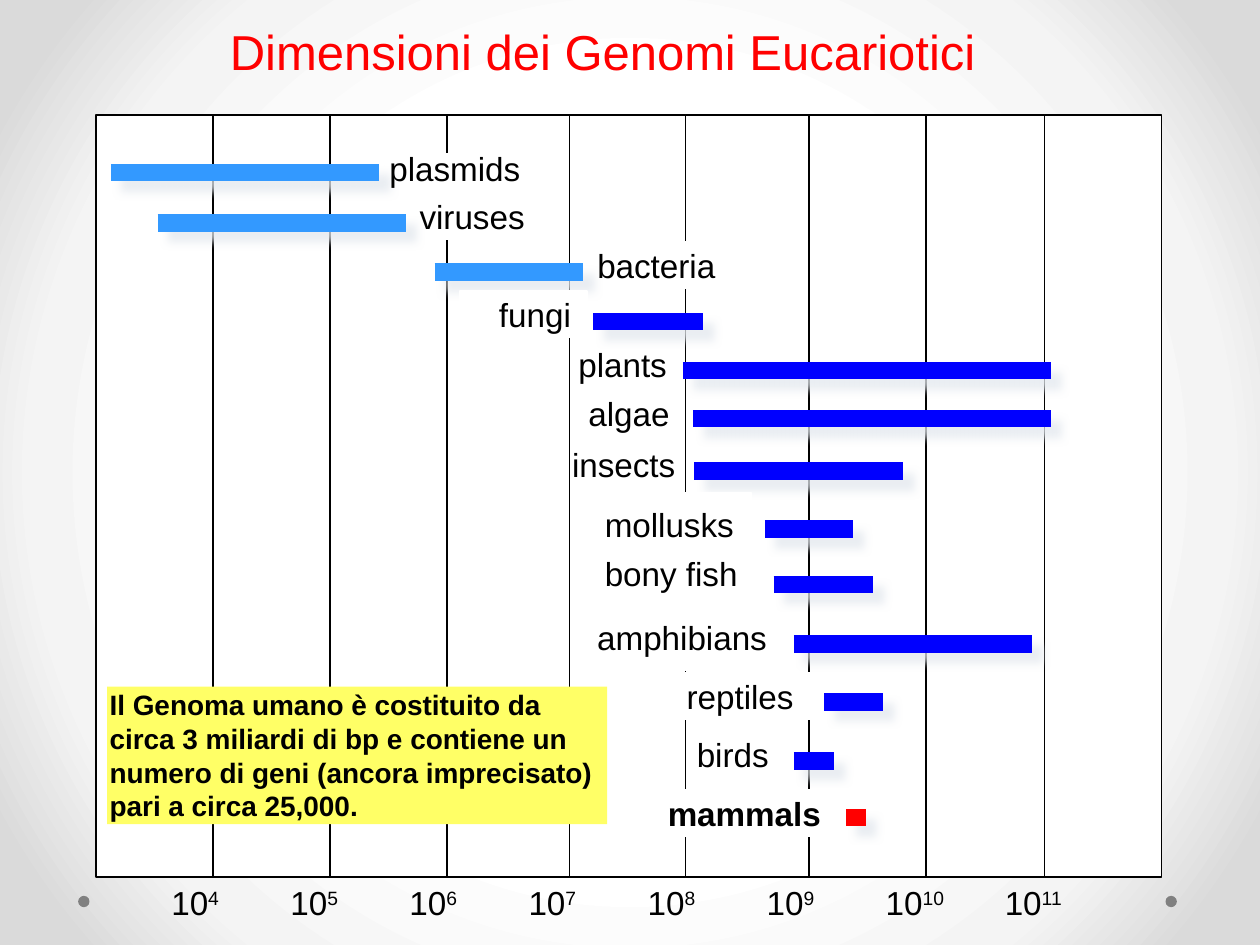
import pptx
import pptx.util
import pptx.dml.color
import pptx.enum.shapes
import pptx.enum.text
import pptx.oxml
import pptx.oxml.ns

# The slide is a grid of square cells, 100 columns by 75 rows
CELL = pptx.util.Inches(0.1)
COLUMNS, ROWS = 100, 75
NS = pptx.oxml.ns.nsdecls("a")
SHAPES = pptx.enum.shapes.MSO_SHAPE
TEXT = pptx.enum.text

FRAME_FORMAT = {
    "margin_left": pptx.util.Inches(0.02),
    "margin_right": pptx.util.Inches(0.02),
    "margin_top": pptx.util.Inches(0.01),
    "margin_bottom": pptx.util.Inches(0.01),
    "vertical_anchor": TEXT.MSO_ANCHOR.TOP,
    "auto_size": TEXT.MSO_AUTO_SIZE.NONE,
}

SKY, BLUE, RED = "3399FF", "0000FF", "FF0000"
BLACK, WHITE, YELLOW, GREY = "000000", "FFFFFF", "FFFF66", "808080"

DECADE_EDGES = [7.6, 16.9, 26.2, 35.5, 45.2, 54.4, 64.2, 73.5, 82.9, 92.2]
CHART_TOP, CHART_HEIGHT = 9.1, 60.5

# name, colour, bar (from, to, row), label (column, row, width)
GROUPS = [
    ("plasmids", SKY, (8.8, 30.1, 13.7), (30.7, 11.7, 10.9)),
    ("viruses", SKY, (12.5, 32.2, 17.7), (33.1, 15.5, 8.8)),
    ("bacteria", SKY, (34.5, 46.3, 21.6), (47.2, 19.4, 9.9)),
    ("fungi", BLUE, (47.1, 55.8, 25.5), (39.4, 23.3, 6.2)),
    ("plants", BLUE, (54.2, 83.4, 29.4), (45.7, 27.2, 7.5)),
    ("algae", BLUE, (55, 83.4, 33.2), (46.5, 31.1, 6.9)),
    ("insects", BLUE, (55.1, 71.7, 37.4), (45.2, 35.2, 8.7)),
    ("mollusks", BLUE, (60.7, 67.7, 42), (47.8, 39.9, 10.7)),
    ("bony fish", BLUE, (61.4, 69.3, 46.4), (47.8, 43.8, 11)),
    ("amphibians", BLUE, (63, 81.9, 51.1), (47.2, 48.9, 14)),
    ("reptiles", BLUE, (65.4, 70.1, 55.7), (54.3, 53.6, 9)),
    ("birds", BLUE, (63, 66.2, 60.4), (55.1, 58.2, 6.2)),
    ("mammals", RED, (67.1, 68.7, 64.9), (52.8, 62.9, 12.7)),
]

# White patches that interrupt the grid lines behind the labels
VIRUS_PATCH = (34.1, 15.3, 9.3, 3.7)
LABEL_PATCHES = [
    (32.5, 12.2, 11.7, 3),
    (49, 19.2, 13.3, 3.7),
    (36.5, 23.1, 10.1, 3.7),
    (47.8, 39.1, 11.8, 4.7),
    (46.7, 43.3, 14, 5.3),
    (49.8, 48.7, 11.7, 4.5),
    (52.2, 53.4, 12.5, 3.7),
    (53.8, 62.7, 13.3, 3.7),
]


def cells(*counts):
    return [round(count * CELL) for count in counts]


def colour(hex_string):
    return pptx.dml.color.RGBColor.from_string(hex_string)


def paint_background(slide):
    slide.background.fill.solid()
    stops = "".join(
        f'<a:gs pos="{share}000"><a:srgbClr val="{tone}"/></a:gs>'
        for share, tone in [(50, WHITE), (76, "F4F4F4"), (92, "DADADA")]
    )
    gradient = pptx.oxml.parse_xml(
        f'<a:gradFill {NS} rotWithShape="1"><a:gsLst>{stops}</a:gsLst>'
        '<a:path path="circle"><a:fillToRect l="50000" t="50000" '
        'r="50000" b="50000"/></a:path></a:gradFill>'
    )
    solid = next(slide.background._cSld.iter(pptx.oxml.ns.qn("a:solidFill")))
    solid.getparent().replace(solid, gradient)


def add_block(slide, area, fill, outline=None, kind=SHAPES.RECTANGLE):
    block = slide.shapes.add_shape(kind, *cells(*area))
    block.shadow.inherit = False
    block.fill.solid()
    block.fill.fore_color.rgb = colour(fill)
    if outline:
        block.line.color.rgb = colour(outline)
        block.line.width = pptx.util.Pt(1)
    else:
        block.line.fill.background()
    return block


def add_bar(slide, start, end, row, tone):
    bar = slide.shapes.add_connector(
        pptx.enum.shapes.MSO_CONNECTOR.STRAIGHT, *cells(start, row, end, row)
    )
    bar.line.color.rgb = colour(tone)
    bar.line.width = pptx.util.Pt(10)
    blur, distance = pptx.util.Pt(5), pptx.util.Pt(8.5)
    bar._element.spPr.append(pptx.oxml.parse_xml(
        f'<a:effectLst {NS}><a:outerShdw blurRad="{blur}" dist="{distance}" '
        'dir="2700000" algn="ctr" rotWithShape="0"><a:srgbClr val="E4E9EF">'
        '<a:alpha val="75000"/></a:srgbClr></a:outerShdw></a:effectLst>'
    ))


def write(holder, text, size, tone=BLACK, bold=False, wrap=True,
          align=TEXT.PP_ALIGN.LEFT, exponent=""):
    frame = holder.text_frame
    for name, value in FRAME_FORMAT.items():
        setattr(frame, name, value)
    frame.word_wrap = wrap
    paragraph = frame.paragraphs[0]
    paragraph.alignment = align
    for part in filter(None, (text, exponent)):
        run = paragraph.add_run()
        run.text = part
        font_format = {"name": "Arial", "size": pptx.util.Pt(size), "bold": bold}
        for name, value in font_format.items():
            setattr(run.font, name, value)
        run.font.color.rgb = colour(tone)
    if exponent:
        run._r.get_or_add_rPr().set("baseline", "30000")


def add_label(slide, column, row, width, text, **options):
    label = slide.shapes.add_textbox(*cells(column, row, width, 3.4))
    write(label, text, 19, wrap=False, **options)


def add_title(slide):
    title = slide.shapes.title
    title.left, title.top, title.width, title.height = cells(14.9, 1.6, 66.9, 4.9)
    write(title, "Dimensioni dei Genomi Eucariotici ", 28, RED,
          align=TEXT.PP_ALIGN.CENTER)


def add_chart_grid(slide):
    for left, right in zip(DECADE_EDGES, DECADE_EDGES[1:]):
        add_block(slide, (left, CHART_TOP, right - left, CHART_HEIGHT), WHITE, BLACK)


def add_groups(slide):
    add_block(slide, VIRUS_PATCH, WHITE, WHITE)
    for _, tone, bar, _ in GROUPS:
        add_bar(slide, *bar, tone)
    for patch in LABEL_PATCHES:
        add_block(slide, patch, WHITE, WHITE)
    for name, _, _, place in GROUPS:
        add_label(slide, *place, name, bold=name == "mammals")


def add_axis(slide):
    for step, power in enumerate(range(4, 12)):
        width = 4.4 if power < 10 else 5.4
        add_label(slide, 13.4 + 9.45 * step, 69.9, width, "10", exponent=str(power))


def add_note(slide):
    note = add_block(slide, (8.5, 54.5, 39.7, 10.9), YELLOW)
    write(note, "Il Genoma umano è costituito da circa 3 miliardi di bp e contiene "
          "un numero di geni (ancora imprecisato) pari a circa 25,000.", 16, bold=True)


def main():
    deck = pptx.Presentation()
    deck.slide_width, deck.slide_height = cells(COLUMNS, ROWS)
    slide = deck.slides.add_slide(deck.slide_layouts[5])
    paint_background(slide)
    # Footer dots
    for column in (92.5, 6.2):
        add_block(slide, (column, 71.1, 0.9, 0.9), GREY, kind=SHAPES.OVAL)
    add_title(slide)
    add_chart_grid(slide)
    add_groups(slide)
    add_axis(slide)
    add_note(slide)
    deck.save("out.pptx")


if __name__ == "__main__":
    main()
